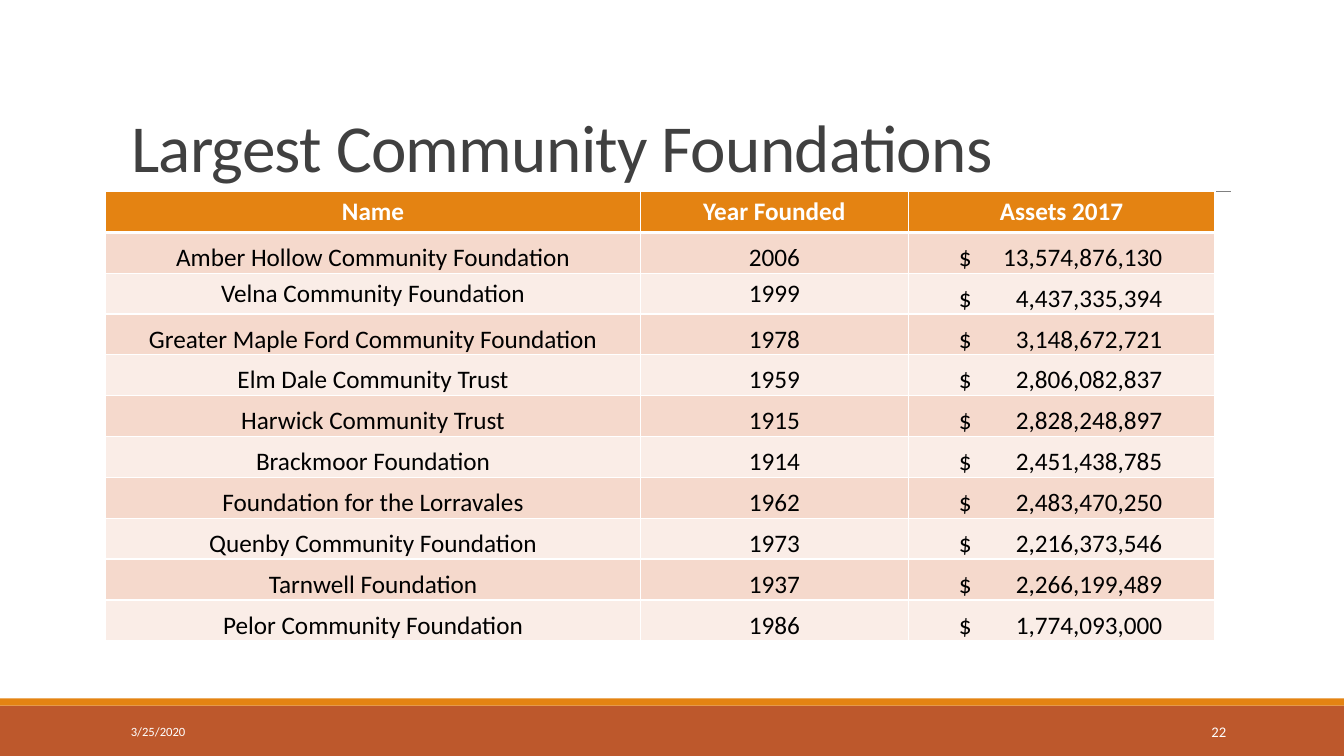
from typing import NamedTuple

from lxml import etree
from pptx import Presentation
from pptx.dml.color import RGBColor
from pptx.enum.shapes import MSO_CONNECTOR, MSO_SHAPE
from pptx.enum.text import MSO_ANCHOR, MSO_AUTO_SIZE, PP_ALIGN
from pptx.oxml.ns import qn
from pptx.util import Inches, Pt

FONT = "Calibri"
WHITE, BLACK = "FFFFFF", "000000"
ORANGE, RUST = "E48312", "BD582C"
BAND_FILLS = ("F5D9CC", "FAEDE7")
LEFT, CENTER, RIGHT = PP_ALIGN.LEFT, PP_ALIGN.CENTER, PP_ALIGN.RIGHT
TOP, MIDDLE, BOTTOM = MSO_ANCHOR.TOP, MSO_ANCHOR.MIDDLE, MSO_ANCHOR.BOTTOM
RECTANGLE, STRAIGHT = MSO_SHAPE.RECTANGLE, MSO_CONNECTOR.STRAIGHT
NO_AUTOFIT = MSO_AUTO_SIZE.NONE

TITLE_ONLY_LAYOUT = 5
TABLE_LEFT, TABLE_TOP, TABLE_HEIGHT = 1.05, 1.9, 4.46
COLUMN_WIDTHS = (5.3, 2.66, 3.04)
HEADERS = ("Name", "Year Founded", "Assets 2017")
AMOUNT_INSET, AMOUNT_TAB = 0.5, 2.02


class Foundation(NamedTuple):
    name: str
    year: str
    assets: str
    anchor: MSO_ANCHOR = BOTTOM


class Bar(NamedTuple):
    top: float
    height: float
    fill: str


class FooterText(NamedTuple):
    text: str
    left: float
    width: float
    size: float
    alignment: PP_ALIGN


FOUNDATIONS = (
    Foundation("Amber Hollow Community Foundation", "2006", "13,574,876,130"),
    Foundation("Velna Community Foundation", "1999", "4,437,335,394", MIDDLE),
    Foundation("Greater Maple Ford Community Foundation", "1978", "3,148,672,721"),
    Foundation("Elm Dale Community Trust", "1959", "2,806,082,837"),
    Foundation("Harwick Community Trust", "1915", "2,828,248,897"),
    Foundation("Brackmoor Foundation", "1914", "2,451,438,785"),
    Foundation("Foundation for the Lorravales", "1962", "2,483,470,250"),
    Foundation("Quenby Community Foundation", "1973", "2,216,373,546"),
    Foundation("Tarnwell Foundation", "1937", "2,266,199,489"),
    Foundation("Pelor Community Foundation", "1986", "1,774,093,000"),
)
BARS = (Bar(7, 0.5, RUST), Bar(6.93, 0.07, ORANGE))
FOOTER_TEXTS = (
    FooterText("3/25/2020", 1.2, 2.7, 9, LEFT),
    FooterText("22", 10.83, 1.43, 10.5, RIGHT),
)


def color(value: str) -> RGBColor:
    return RGBColor.from_string(value)


def add_run(paragraph, text: str, size: float, font_color: str, bold: bool = False):
    run = paragraph.add_run()
    run.text = text
    run.font.name = FONT
    run.font.size = Pt(size)
    run.font.bold = bold
    run.font.color.rgb = color(font_color)
    return run


def add_bar(slide, bar: Bar) -> None:
    shape = slide.shapes.add_shape(
        RECTANGLE, 0, Inches(bar.top), Inches(13.33), Inches(bar.height))
    shape.shadow.inherit = False
    shape.fill.solid()
    shape.fill.fore_color.rgb = color(bar.fill)
    shape.line.fill.background()


def add_title_rule(slide) -> None:
    rule = slide.shapes.add_connector(
        STRAIGHT, Inches(1.31), Inches(1.9), Inches(12.21), Inches(1.9))
    rule.line.color.rgb = color("808080")
    rule.line.width = Pt(0.5)
    etree.SubElement(rule._element.spPr, qn("a:effectLst"))


def format_title(slide) -> None:
    title = slide.shapes.title
    title.left, title.top = Inches(1.2), Inches(0.31)
    title.width, title.height = Inches(11), Inches(1.59)
    frame = title.text_frame
    frame.auto_size = NO_AUTOFIT
    frame.vertical_anchor = BOTTOM
    paragraph = frame.paragraphs[0]
    paragraph.alignment = LEFT
    paragraph.line_spacing = 0.85
    run = add_run(paragraph, "Largest Community Foundations", 48, "404040")
    run.font._element.set("spc", "-50")


def add_footer_text(slide, item: FooterText) -> None:
    box = slide.shapes.add_textbox(
        Inches(item.left), Inches(7.06), Inches(item.width), Inches(0.4))
    frame = box.text_frame
    frame.word_wrap = True
    frame.vertical_anchor = MIDDLE
    paragraph = frame.paragraphs[0]
    paragraph.alignment = item.alignment
    add_run(paragraph, item.text, item.size, WHITE)


def format_cell(cell, fill: str, top_width: float, bottom_width: float) -> None:
    properties = cell._tc.get_or_add_tcPr()
    widths = {"a:lnL": 1, "a:lnR": 1, "a:lnT": top_width, "a:lnB": bottom_width}
    for tag, width in widths.items():
        border = etree.SubElement(properties, qn(tag), w=str(Pt(width)))
        solid = etree.SubElement(border, qn("a:solidFill"))
        etree.SubElement(solid, qn("a:srgbClr"), val=WHITE)
    cell.fill.solid()
    cell.fill.fore_color.rgb = color(fill)


def fill_body_cell(cell, text: str, anchor: MSO_ANCHOR):
    cell.margin_left = cell.margin_right = 0
    cell.margin_top = cell.margin_bottom = 0
    cell.vertical_anchor = anchor
    paragraph = cell.text_frame.paragraphs[0]
    paragraph.alignment = CENTER
    add_run(paragraph, text, 18, BLACK)
    return paragraph


def fill_amount_cell(cell, amount: str) -> None:
    paragraph = fill_body_cell(cell, f"$\t{amount}", BOTTOM)
    paragraph.alignment = LEFT
    cell.margin_left = Inches(AMOUNT_INSET)
    tabs = etree.SubElement(paragraph._p.get_or_add_pPr(), qn("a:tabLst"))
    etree.SubElement(tabs, qn("a:tab"), pos=str(Inches(AMOUNT_TAB)), algn="r")


def add_foundation_table(slide) -> None:
    row_count = len(FOUNDATIONS) + 1
    table = slide.shapes.add_table(
        row_count, len(HEADERS), Inches(TABLE_LEFT), Inches(TABLE_TOP),
        Inches(sum(COLUMN_WIDTHS)), Inches(TABLE_HEIGHT)).table
    for column, width in zip(table.columns, COLUMN_WIDTHS):
        column.width = Inches(width)

    # Header row
    for index, header in enumerate(HEADERS):
        cell = table.cell(0, index)
        format_cell(cell, ORANGE, 1, 3)
        cell.vertical_anchor = TOP
        paragraph = cell.text_frame.paragraphs[0]
        paragraph.alignment = CENTER
        add_run(paragraph, header, 18, WHITE, bold=True)

    # Banded rows
    for row, foundation in enumerate(FOUNDATIONS, start=1):
        for index in range(len(HEADERS)):
            format_cell(table.cell(row, index), BAND_FILLS[(row - 1) % 2],
                        3 if row == 1 else 1, 1)
        fill_body_cell(table.cell(row, 0), foundation.name, foundation.anchor)
        fill_body_cell(table.cell(row, 1), foundation.year, foundation.anchor)
        fill_amount_cell(table.cell(row, 2), foundation.assets)


def main() -> None:
    presentation = Presentation()
    presentation.slide_width = Inches(13.33)
    presentation.slide_height = Inches(7.5)
    slide = presentation.slides.add_slide(
        presentation.slide_layouts[TITLE_ONLY_LAYOUT])

    # Footer bars and title
    for bar in BARS:
        add_bar(slide, bar)
    add_title_rule(slide)
    format_title(slide)

    # Table and footer texts
    add_foundation_table(slide)
    for item in FOOTER_TEXTS:
        add_footer_text(slide, item)

    presentation.save("out.pptx")


if __name__ == "__main__":
    main()
